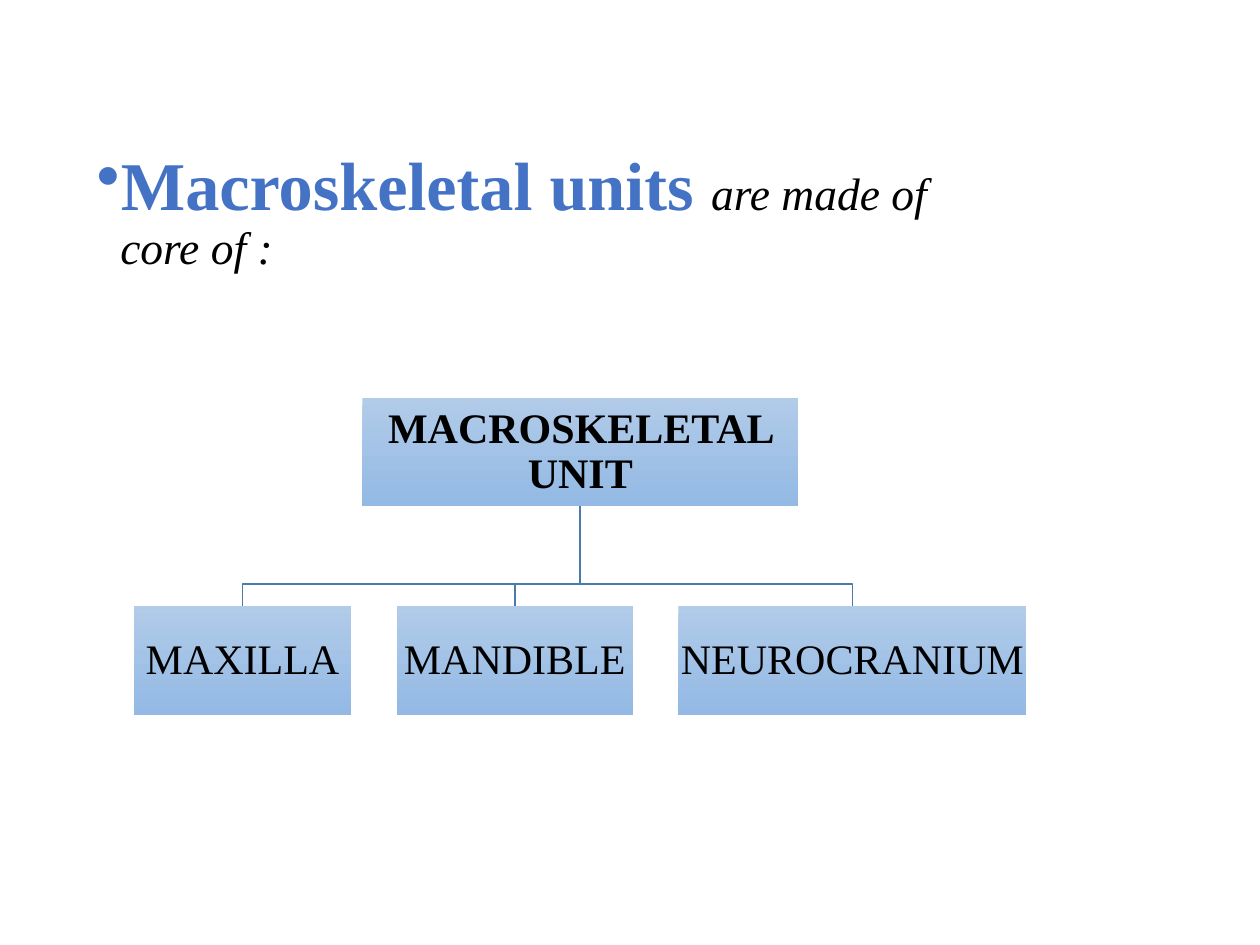
"""Build the slide about macroskeletal units with its tree of three parts."""
from lxml import etree
from pptx import Presentation, util as u
from pptx.dml.color import RGBColor
from pptx.enum import shapes, text
from pptx.oxml import ns

BLUE = RGBColor(0x44, 0x72, 0xC4)
BLACK = RGBColor(0, 0, 0)
LINE = RGBColor(0x49, 0x7C, 0xAB)
GRADIENT = (RGBColor(0xB1, 0xCB, 0xE9), RGBColor(0x93, 0xB9, 0xE4))
FONT = "Times New Roman"

HEADING = [
    ("Macroskeletal units ", {"size": u.Pt(39), "bold": True}, BLUE),
    ("are made of core of :", {"size": u.Pt(26), "italic": True}, BLACK),
]
ROOT = ("MACROSKELETAL UNIT", 249)
PARTS = [("MAXILLA", 124), ("MANDIBLE", 135), ("NEUROCRANIUM", 199)]

HEADING_BOX = (48.2, 82.8, 499.7, 391)
LEFT, GAP, BOX_HEIGHT = 76.6, 26, 61.8
ROOT_TOP, PARTS_TOP, DROP = 227.5, 346.6, 13
INDENT = 13.5


def apply_format(target, values):
    for name, value in values.items():
        setattr(target, name, value)


def add_run(paragraph, content, values, color):
    run = paragraph.add_run()
    run.text = content
    apply_format(run.font, {"name": FONT, **values})
    run.font.color.rgb = color


def add_heading(slide):
    shape = slide.shapes.add_textbox(*map(u.Pt, HEADING_BOX))
    shape.text_frame.word_wrap = True
    paragraph = shape.text_frame.paragraphs[0]
    apply_format(paragraph, {"line_spacing": 0.9, "space_before": u.Pt(7.5)})
    properties = paragraph._p.get_or_add_pPr()
    properties.set("marL", str(u.Pt(INDENT)))
    properties.set("indent", str(-u.Pt(INDENT)))
    etree.SubElement(properties, ns.qn("a:buChar")).set("char", "•")
    for content, values, color in HEADING:
        add_run(paragraph, content, values, color)


def add_box(slide, label, left, top, width, bold=False):
    shape = slide.shapes.add_shape(
        shapes.MSO_SHAPE.RECTANGLE, *map(u.Pt, (left, top, width, BOX_HEIGHT)))
    shape.shadow.inherit = False
    shape.line.fill.background()
    shape.fill.gradient()
    shape.fill.gradient_angle = 270
    for stop, color in zip(shape.fill.gradient_stops, GRADIENT):
        stop.color.rgb = color
    margins = {f"margin_{side}": u.Pt(1.2) for side in ("left", "top", "right", "bottom")}
    apply_format(shape.text_frame, {
        "word_wrap": True, "vertical_anchor": text.MSO_ANCHOR.MIDDLE, **margins})
    paragraph = shape.text_frame.paragraphs[0]
    apply_format(paragraph, {"alignment": text.PP_ALIGN.CENTER, "line_spacing": 0.9})
    add_run(paragraph, label, {"size": u.Pt(24), "bold": bold}, BLACK)


def add_branch(slide, start, end):
    bend = PARTS_TOP - DROP
    points = [(start, ROOT_TOP + BOX_HEIGHT), (start, bend), (end, bend), (end, PARTS_TOP)]
    first, *rest = [(u.Pt(x), u.Pt(y)) for x, y in points]
    builder = slide.shapes.build_freeform(*first)
    builder.add_line_segments(rest, close=False)
    shape = builder.convert_to_shape()
    shape.shadow.inherit = False
    shape.fill.background()
    shape.line.color.rgb = LINE
    shape.line.width = u.Pt(1)


def add_tree(slide):
    widths = [width for _, width in PARTS]
    lefts = [LEFT + sum(widths[:i]) + GAP * i for i in range(len(widths))]
    center = (LEFT + lefts[-1] + widths[-1]) / 2
    for left, width in reversed(list(zip(lefts, widths))):
        add_branch(slide, center, left + width / 2)
    label, root_width = ROOT
    add_box(slide, label, center - root_width / 2, ROOT_TOP, root_width, bold=True)
    for (label, width), left in zip(PARTS, lefts):
        add_box(slide, label, left, PARTS_TOP, width)


def main():
    presentation = Presentation()
    apply_format(presentation, {"slide_width": u.Pt(720), "slide_height": u.Pt(540)})
    slide = presentation.slides.add_slide(presentation.slide_layouts[6])
    add_heading(slide)
    add_tree(slide)
    presentation.save("out.pptx")


if __name__ == "__main__":
    main()
